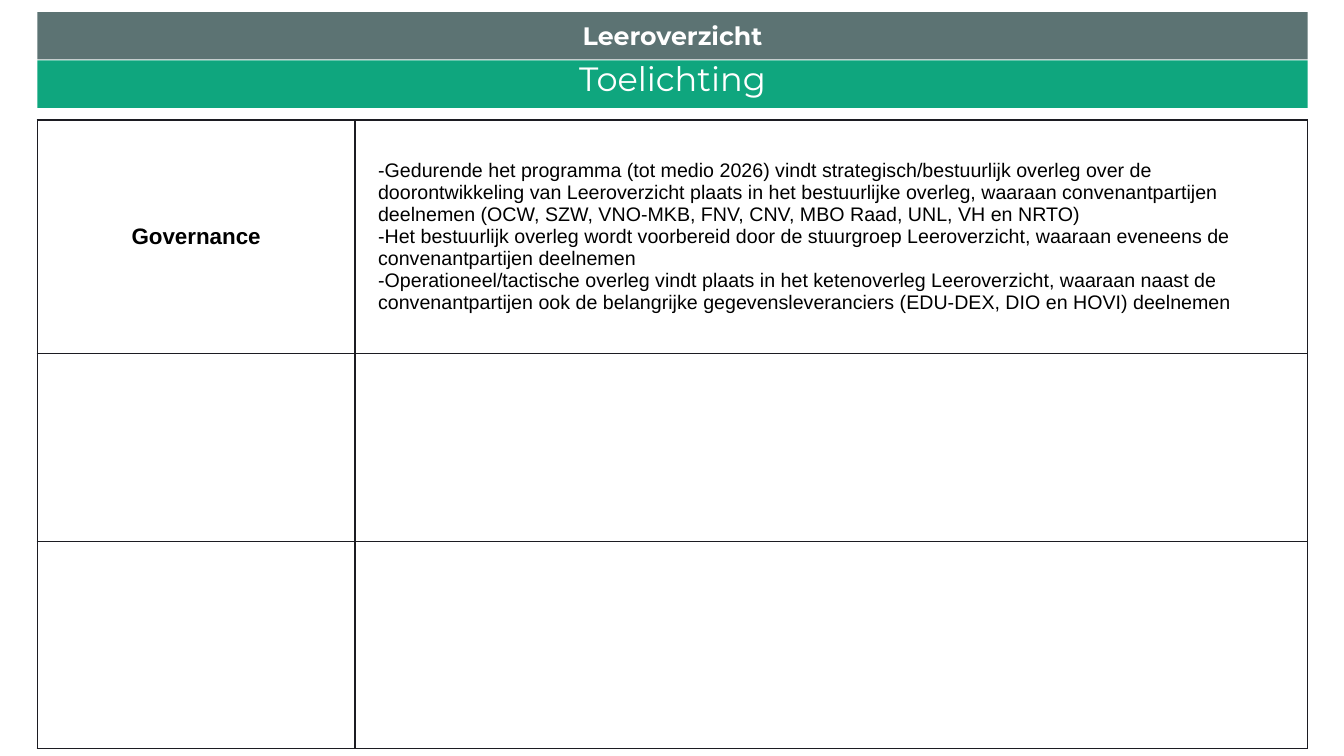
from lxml.etree import SubElement
from pptx import Presentation
from pptx.dml.color import RGBColor
from pptx.enum.shapes import MSO_SHAPE
from pptx.enum.text import MSO_ANCHOR, PP_ALIGN
from pptx.oxml.ns import qn
from pptx.util import Inches, Pt

LEFT, WIDTH = 0.37, 12.6
BAND_HEIGHT = 0.47
COLUMN_SHARES = (1 / 4, 3 / 4)
ROW_HEIGHTS = (2.32, 1.86, 2.06)
GOVERNANCE_POINTS = (
    "-Gedurende het programma (tot medio 2026) vindt strategisch/bestuurlijk overleg over de "
    "doorontwikkeling van Leeroverzicht plaats in het bestuurlijke overleg, waaraan "
    "convenantpartijen deelnemen (OCW, SZW, VNO-MKB, FNV, CNV, MBO Raad, UNL, VH en NRTO)",
    "-Het bestuurlijk overleg wordt voorbereid door de stuurgroep Leeroverzicht, waaraan "
    "eveneens de convenantpartijen deelnemen",
    "-Operationeel/tactische overleg vindt plaats in het ketenoverleg Leeroverzicht, waaraan "
    "naast de convenantpartijen ook de belangrijke gegevensleveranciers "
    "(EDU-DEX, DIO en HOVI) deelnemen",
)


def colour(code):
    return RGBColor.from_string(code)


def set_margins(holder, size):
    holder.margin_left = holder.margin_right = Inches(size)
    holder.margin_top = holder.margin_bottom = Inches(size)


def style_text(frame, font, size, code, bold=False, align=PP_ALIGN.LEFT):
    for paragraph in frame.paragraphs:
        paragraph.alignment = align
        for run in paragraph.runs:
            run.font.name = font
            run.font.size = Pt(size)
            run.font.bold = bold
            run.font.color.rgb = colour(code)


def add_band(slide, left, top, width, height, fill, label, size, bold, anchor):
    band = slide.shapes.add_shape(
        MSO_SHAPE.RECTANGLE, Inches(left), Inches(top), Inches(width), Inches(height))
    band.shadow.inherit = False
    band.fill.solid()
    band.fill.fore_color.rgb = colour(fill)
    band.line.fill.background()
    frame = band.text_frame
    frame.word_wrap = True
    frame.vertical_anchor = anchor
    set_margins(frame, 0.1)
    frame.text = label
    style_text(frame, "Montserrat", size, "FFFFFF", bold, PP_ALIGN.CENTER)


def add_header(slide, left, top, width):
    add_band(slide, left, top, width, BAND_HEIGHT, "5C7373",
             "Leeroverzicht", 18, True, MSO_ANCHOR.MIDDLE)
    add_band(slide, left, top + BAND_HEIGHT + 0.01, width, BAND_HEIGHT, "0FA67E",
             "Toelichting", 24, False, MSO_ANCHOR.BOTTOM)


def style_cell(cell):
    cell.vertical_anchor = MSO_ANCHOR.MIDDLE
    properties = cell._tc.get_or_add_tcPr()
    for side in ("a:lnL", "a:lnR", "a:lnT", "a:lnB"):
        border = SubElement(properties, qn(side), w=str(Pt(1)))
        ink = SubElement(border, qn("a:solidFill"))
        SubElement(ink, qn("a:srgbClr"), val="1C1C22")
    cell.fill.background()


def add_explanation(slide, left, top, width):
    table = slide.shapes.add_table(
        len(ROW_HEIGHTS), len(COLUMN_SHARES), Inches(left), Inches(top),
        Inches(width), Inches(sum(ROW_HEIGHTS))).table
    table.first_row = table.horz_banding = False
    for column, share in zip(table.columns, COLUMN_SHARES):
        column.width = Inches(width * share)
    for row, height in zip(table.rows, ROW_HEIGHTS):
        row.height = Inches(height)
    for cell in table.iter_cells():
        style_cell(cell)

    topic, points = table.cell(0, 0), table.cell(0, 1)
    set_margins(topic, 0.1)
    topic.text_frame.text = "Governance"
    style_text(topic.text_frame, "Arial", 16, "000000", True, PP_ALIGN.CENTER)
    set_margins(points, 0.05)
    points.text_frame.text = "\n".join(GOVERNANCE_POINTS)
    style_text(points.text_frame, "Arial", 14, "000000")
    for paragraph in points.text_frame.paragraphs:
        indent = paragraph._p.get_or_add_pPr()
        indent.set("marL", str(Inches(0.18)))
        indent.set("indent", "0")


def main():
    deck = Presentation()
    deck.slide_width, deck.slide_height = Inches(13.33), Inches(7.5)
    slide = deck.slides.add_slide(deck.slide_layouts[6])
    add_header(slide, LEFT, 0.12, WIDTH)
    add_explanation(slide, LEFT, 1.19, WIDTH)
    deck.save("out.pptx")


if __name__ == "__main__":
    main()
